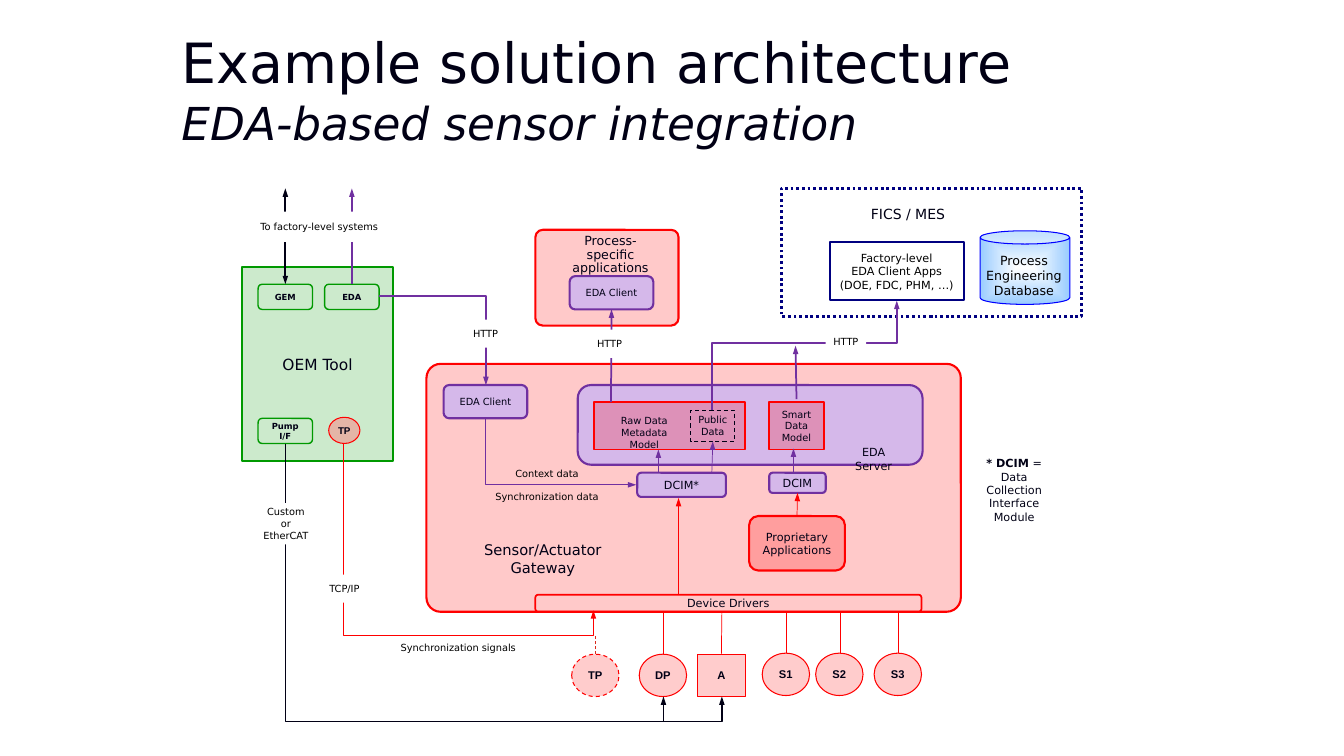
import lxml.etree
import pptx
import pptx.dml.color
import pptx.enum.dml
import pptx.enum.shapes
import pptx.enum.text
import pptx.oxml.ns
import pptx.util

Cm = pptx.util.Cm
Pt = pptx.util.Pt
RGBColor = pptx.dml.color.RGBColor
SHAPE = pptx.enum.shapes.MSO_SHAPE
CONNECTOR = pptx.enum.shapes.MSO_CONNECTOR
DASH = pptx.enum.dml.MSO_LINE
ALIGN = pptx.enum.text.PP_ALIGN
ANCHOR = pptx.enum.text.MSO_ANCHOR
qn = pptx.oxml.ns.qn
SubElement = lxml.etree.SubElement

INK = RGBColor(0x01, 0x00, 0x15)
BLACK = RGBColor(0x00, 0x00, 0x00)
WHITE = RGBColor(0xFF, 0xFF, 0xFF)
RED = RGBColor(0xFF, 0x00, 0x00)
DARK_RED = RGBColor(0xDA, 0x29, 0x1C)
SALMON = RGBColor(0xFF, 0x7C, 0x80)
GREEN = RGBColor(0x00, 0x99, 0x00)
PURPLE = RGBColor(0x70, 0x30, 0xA0)
LILAC = RGBColor(0xD5, 0xB8, 0xEA)
NAVY = RGBColor(0x00, 0x00, 0x80)
BLUE = RGBColor(0x00, 0x00, 0xFF)
SKY = RGBColor(0x99, 0xCC, 0xFF)
INCH = 2.54

BASE = dict(kind=SHAPE.RECTANGLE, fill=None, alpha=None, line=None, width=0.75, dash=None,
            corner=None, size=8, color=INK, bold=False, font="DejaVu Sans",
            align=ALIGN.CENTER, anchor=ANCHOR.MIDDLE, wrap=True, spacing=None, before=None)
ROUNDED = dict(kind=SHAPE.ROUNDED_RECTANGLE)
RED_AREA = dict(fill=RED, alpha=21, line=RED, width=1.5)
DATA_MODEL = dict(RED_AREA, width=1.25, size=7)
PORT = dict(ROUNDED, line=GREEN, width=1, size=6, bold=True)
EDA_BOX = dict(ROUNDED, fill=LILAC, line=PURPLE, width=1.5)
DEVICE = dict(kind=SHAPE.OVAL, fill=RED, alpha=20, line=RED, font="Arial", bold=True, wrap=False)
LABEL = dict(fill=WHITE, size=7, color=BLACK, wrap=False)
TEXT = dict(kind=None, anchor=ANCHOR.TOP)
FREE_LABEL = dict(kind=None, size=7, color=BLACK)

deck = pptx.Presentation()
deck.slide_width, deck.slide_height = Cm(13.33 * INCH), Cm(7.5 * INCH)
page = deck.slides.add_slide(deck.slide_layouts[5])


def add_box(place, text="", style=BASE, **changes):
    look = {**BASE, **style, **changes}
    lengths = [Cm(value * INCH) for value in place]
    if look["kind"] is None:
        box = page.shapes.add_textbox(*lengths)
    else:
        box = page.shapes.add_shape(look["kind"], *lengths)
        box.shadow.inherit = False
        if look["corner"]:
            box.adjustments[0] = look["corner"]
        if look["fill"] is None:
            box.fill.background()
        else:
            box.fill.solid()
            box.fill.fore_color.rgb = look["fill"]
        if look["alpha"]:
            tint = box._element.spPr.find(".//" + qn("a:srgbClr"))
            SubElement(tint, qn("a:alpha"), val=str(look["alpha"] * 1000))
        if look["line"] is None:
            box.line.fill.background()
        else:
            box.line.color.rgb = look["line"]
            box.line.width = Pt(look["width"])
            box.line.dash_style = look["dash"]
    frame = box.text_frame
    frame.word_wrap = look["wrap"]
    frame.vertical_anchor = look["anchor"]
    for index, line in enumerate(text.split("\n") if text else []):
        para = frame.add_paragraph() if index else frame.paragraphs[0]
        para.alignment = look["align"]
        para.line_spacing = look["spacing"]
        if index and look["before"]:
            para.space_before = Pt(look["before"])
        lead, mark, rest = line.rpartition("|")
        for piece, strong in ((lead, True), (rest, look["bold"])):
            if piece:
                span = para.add_run()
                span.text = piece
                span.font.color.rgb = look["color"]
                for name, value in dict(name=look["font"], size=Pt(look["size"]), bold=strong).items():
                    setattr(span.font, name, value)
    return box


def add_link(kind, ends, color, width, arrows="", dash=None):
    link = page.shapes.add_connector(kind, *[Cm(value * INCH) for value in ends])
    link.line.color.rgb = color
    link.line.width = Pt(width)
    link.line.dash_style = dash
    for arrow in arrows.split():
        SubElement(link.line._get_or_add_ln(), qn("a:" + arrow), type="triangle", w="sm")
    SubElement(link._element.spPr, qn("a:effectLst"))
    return link


title = page.shapes.title
for name, value in dict(left=1.7, top=0.32, width=10.65, height=1.21).items():
    setattr(title, name, Cm(value * INCH))
title.text_frame.auto_size = pptx.enum.text.MSO_AUTO_SIZE.NONE
title.text_frame.vertical_anchor = ANCHOR.BOTTOM
heading = title.text_frame.paragraphs[0]
heading.alignment = ALIGN.LEFT
for text, size, italic in (("Example solution architecture", 39.6, False),
                           ("EDA-based sensor integration", 32.4, True)):
    if italic:
        heading.add_line_break()
    span = heading.add_run()
    span.text = text
    span.font.color.rgb = INK
    for name, value in dict(name="DejaVu Sans", size=Pt(size), italic=italic).items():
        setattr(span.font, name, value)

add_box((4.23, 3.61, 5.3, 2.46), "", {**RED_AREA, **ROUNDED}, corner=0.057)
add_box((2.4, 2.65, 1.5, 1.92), "OEM Tool", fill=GREEN, alpha=20, line=GREEN, width=1.5, size=11)
eda_port = add_box((3.22, 2.82, 0.54, 0.25), "EDA", PORT)
gem_port = add_box((2.56, 2.82, 0.54, 0.25), "GEM", PORT)
add_box((2.56, 4.15, 0.54, 0.25), "Pump I/F", PORT)
add_box((3.26, 4.14, 0.31, 0.26), "TP", DEVICE, fill=SALMON, alpha=48, size=7)
add_box((5.31, 2.28, 1.42, 0.95), "", {**RED_AREA, **ROUNDED}, corner=0.077)
add_box((4.51, 5.32, 1.75, 0.28), "Sensor/Actuator Gateway", TEXT, size=10.5)
add_box((5.31, 5.9, 3.83, 0.17), "Device Drivers", ROUNDED, line=RED, width=1.25)

add_box((5.67, 6.49, 0.47, 0.42), "TP", DEVICE, dash=DASH.DASH)
add_box((6.34, 6.49, 0.47, 0.42), "DP", DEVICE)
actuator = add_box((6.92, 6.49, 0.47, 0.42), "A", DEVICE, kind=SHAPE.RECTANGLE)
for left, name in ((7.56, "S1"), (8.09, "S2"), (8.67, "S3")):
    add_box((left, 6.48, 0.47, 0.42), name, DEVICE)

add_box((7.75, 1.87, 2.98, 1.27), line=NAVY, width=2, dash=DASH.ROUND_DOT)
add_box((8.54, 1.99, 0.94, 0.27), "FICS / MES", TEXT, size=10, wrap=False, align=ALIGN.LEFT)
add_box((8.23, 2.4, 1.33, 0.58), "Factory-level\nEDA Client Apps\n(DOE, FDC, PHM, …)",
        line=NAVY, width=1.25, color=BLACK, wrap=False)
add_box((4.4, 3.82, 0.83, 0.33), "EDA Client", EDA_BOX, size=7)
add_box((5.73, 3.82, 3.42, 0.79), "", EDA_BOX)
add_box((8.31, 4.37, 0.71, 0.24), "EDA Server", TEXT)
process_client = add_box((5.65, 2.74, 0.83, 0.33), "EDA Client", EDA_BOX, size=7)
add_box((5.55, 2.28, 1.01, 0.37), "Process-specific\napplications", TEXT, size=9, spacing=0.9)
add_box((5.89, 3.99, 1.5, 0.47), "", DATA_MODEL)
add_box((7.63, 3.99, 0.54, 0.47), "Smart\nData\nModel", DATA_MODEL)
add_box((5.95, 4.07, 0.88, 0.34), "Raw Data\nMetadata Model", TEXT, size=7)
public_data = add_box((6.85, 4.07, 0.44, 0.31), "Public\nData", line=INK, dash=DASH.DASH, size=7, wrap=False)
add_box((6.32, 4.69, 0.88, 0.24), "DCIM*", EDA_BOX)
dcim = add_box((7.63, 4.69, 0.56, 0.2), "DCIM", EDA_BOX)
proprietary = add_box((7.43, 5.12, 0.95, 0.54), "Proprietary\nApplications", {**RED_AREA, **ROUNDED})

database = add_box((9.72, 2.29, 0.89, 0.73), kind=SHAPE.CAN, corner=0.18, line=BLUE)
database.fill.gradient()
for stop, color in zip(database.fill.gradient_stops, (WHITE, SKY)):
    stop.color.rgb = color
gradient = database._element.spPr.find(qn("a:gradFill"))
gradient.remove(gradient.find(qn("a:lin")))
shade = SubElement(gradient, qn("a:path"), {"path": "rect"})
SubElement(shade, qn("a:fillToRect"), {side: "50000" for side in "ltrb"})
add_box((9.66, 2.56, 0.99, 0.34), "Process\nEngineering\nDatabase", TEXT,
        anchor=ANCHOR.MIDDLE, size=9, color=BLACK)

for place, turn, flips, bends, adjust, color, width in (
        ((3.74, 3.49, 2.51, 4.33), 270, "H", 3, 1.1, INK, 1),
        ((3.82, 3.99, 1.65, 2.48), 270, "H", 3, 1.151, RED, 1),
        ((3.76, 2.94, 1.06, 0.88), 0, "", 2, None, PURPLE, 1.25),
        ((5.23, 3.73, 0.66, 1.5), 270, "H", 2, None, PURPLE, 0.5),
        ((7.44, 2.61, 1.08, 1.83), 90, "HV", 3, 0.615, PURPLE, 1.25)):
    left, top, across, down = place
    link = add_link(CONNECTOR.ELBOW, (left, top, left + across, top + down), color, width, "tailEnd")
    frame = link._element.spPr.find(qn("a:xfrm"))
    frame.set("rot", str(turn * 60000))
    for flip in flips:
        frame.set("flip" + flip, "1")
    outline = link._element.spPr.find(qn("a:prstGeom"))
    outline.set("prst", f"bentConnector{bends}")
    if adjust:
        SubElement(outline.find(qn("a:avLst")), qn("a:gd"), name="adj1", fmla=f"val {round(adjust * 100000)}")

for x, top in ((6.58, 6.49), (7.8, 6.48), (8.33, 6.48), (8.91, 6.48)):
    add_link(CONNECTOR.STRAIGHT, (x, top, x, 6.07), RED, 0.5)
for ends, color, width, arrows, dash, start, finish in (
        ((7.16, 6.49, 7.16, 6.07), RED, 0.5, "", None, (actuator, 0), None),
        ((6.58, 6.91, 6.58, 7.15), INK, 0.5, "headEnd", None, None, None),
        ((5.9, 6.49, 5.9, 6.3), DARK_RED, 0.5, "", DASH.DASH, None, None),
        ((6.53, 4.69, 6.53, 4.46), PURPLE, 0.5, "tailEnd", None, None, None),
        ((7.06, 4.69, 7.06, 4.37), PURPLE, 0.5, "tailEnd", None, None, (public_data, 2)),
        ((7.87, 4.68, 7.87, 4.45), PURPLE, 0.5, "tailEnd", None, None, None),
        ((7.91, 4.89, 7.91, 5.12), RED, 0.5, "headEnd", None, (dcim, 2), (proprietary, 0)),
        ((6.06, 3.07, 6.06, 3.99), PURPLE, 1.25, "headEnd", None, (process_client, 2), None),
        ((7.9, 3.96, 7.89, 3.43), PURPLE, 1.25, "tailEnd", None, None, None),
        ((3.49, 2.82, 3.49, 1.87), PURPLE, 1.25, "tailEnd", None, (eda_port, 0), None),
        ((2.83, 2.82, 2.83, 1.87), INK, 1.25, "headEnd tailEnd", None, (gem_port, 0), None),
        ((6.73, 5.9, 6.73, 4.94), RED, 0.5, "tailEnd", None, None, None)):
    link = add_link(CONNECTOR.STRAIGHT, ends, color, width, arrows, dash)
    if start:
        link.begin_connect(*start)
    if finish:
        link.end_connect(*finish)

for place, text in (((2.44, 4.99, 0.79, 0.41), "Custom\nor\nEtherCAT"),
                    ((3.02, 5.7, 0.79, 0.28), "TCP/IP"),
                    ((4.42, 3.17, 0.79, 0.28), "HTTP"),
                    ((5.65, 3.27, 0.79, 0.28), "HTTP"),
                    ((8.19, 3.25, 0.4, 0.28), "HTTP"),
                    ((2.77, 2.1, 0.79, 0.3), "To factory-level systems")):
    add_box(place, text, LABEL)
add_box((4.73, 4.66, 1.39, 0.3), "Context data\nSynchronization data", FREE_LABEL, before=8)
add_box((3.8, 6.27, 1.49, 0.3), "Synchronization signals", FREE_LABEL)
add_box((9.56, 4.48, 1, 0.5), "* DCIM| =\nData Collection\nInterface Module", TEXT)

deck.save("out.pptx")
